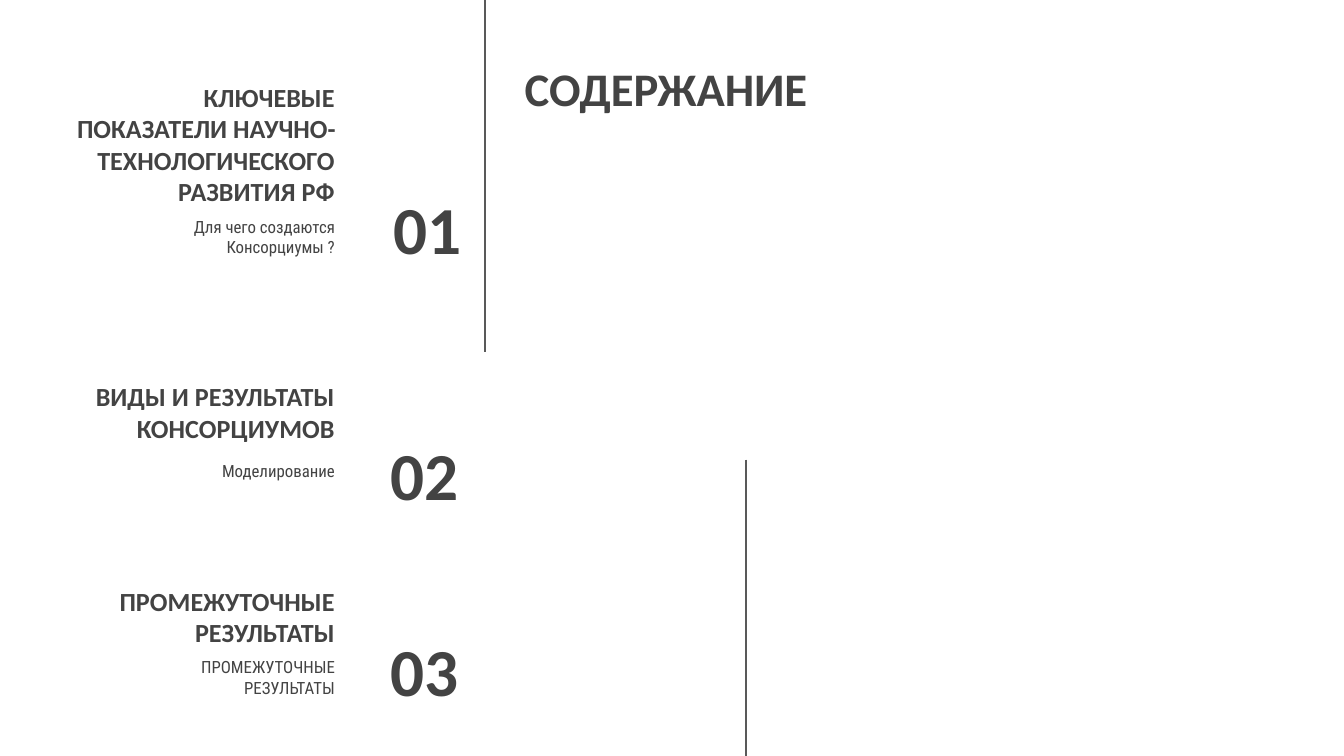
from lxml import etree
from pptx import Presentation
from pptx import util as u
from pptx.dml.color import RGBColor
from pptx.enum import shapes, text
from pptx.oxml.ns import qn

PX = 9144  # 100 px to the inch
INK, RULE = "434343", "595959"
HEAD_FONT, BODY_FONT = "Calibri", "Roboto Condensed"
RIGHT, CENTER = text.PP_ALIGN.RIGHT, text.PP_ALIGN.CENTER
TOP, MIDDLE, BOTTOM = (text.MSO_ANCHOR.TOP, text.MSO_ANCHOR.MIDDLE,
                       text.MSO_ANCHOR.BOTTOM)
ROW_H = 63

# top of the section, number offset (x, y), subtitle offset, wording
SECTIONS = [
    (101, (189, 37), 50, "01",
     "КЛЮЧЕВЫЕ ПОКАЗАТЕЛИ НАУЧНО-ТЕХНОЛОГИЧЕСКОГО РАЗВИТИЯ РФ",
     "Для чего создаются Консорциумы ?"),
    (277, (187, 44), 56, "02", "ВИДЫ И РЕЗУЛЬТАТЫ КОНСОРЦИУМОВ",
     "Моделирование"),
    (429, (187, 38), 50, "03", "ПРОМЕЖУТОЧНЫЕ РЕЗУЛЬТАТЫ",
     "ПРОМЕЖУТОЧНЫЕ РЕЗУЛЬТАТЫ"),
]


def px(n):
    return u.Emu(n * PX)


def color(value):
    return RGBColor.from_string(value)


def write(sp, box, words, size, align, anchor, font=HEAD_FONT, bold=True):
    """Place a text shape in box and format its single paragraph."""
    sp.left, sp.top, sp.width, sp.height = map(px, box)
    tf = sp.text_frame
    tf.word_wrap = True
    tf.auto_size = text.MSO_AUTO_SIZE.NONE
    tf.vertical_anchor = anchor
    tf.margin_left = tf.margin_right = tf.margin_top = tf.margin_bottom = px(10)
    tf.text = words
    p = tf.paragraphs[0]
    p.alignment = align
    p.line_spacing = 1.0
    f = p.runs[0].font
    f.name, f.size, f.bold = font, u.Pt(size), bold
    f.color.rgb = color(INK)


def add_text(s, box, *args, **kwargs):
    write(s.shapes.add_textbox(*map(px, box)), box, *args, **kwargs)


def add_section(s, x, y, number_at, subtitle_dy, number, heading, subtitle):
    dx, dy = number_at
    add_text(s, (x, y, 216, ROW_H), heading, 14, RIGHT, BOTTOM)
    add_text(s, (x + 33, y + subtitle_dy, 183, ROW_H), subtitle, 9, RIGHT, TOP,
             font=BODY_FONT, bold=False)
    add_text(s, (x + dx, y + dy, 121, ROW_H), number, 36, RIGHT, MIDDLE)


def add_vertical_rule(s, x, top, bottom):
    line = s.shapes.add_connector(shapes.MSO_CONNECTOR.STRAIGHT,
                                  px(x), px(top), px(x), px(bottom))
    line.line.color.rgb = color(RULE)
    line.line.width = u.Pt(0.75)
    etree.SubElement(line._element.spPr, qn("a:effectLst"))


def build_contents(prs):
    s = prs.slides.add_slide(prs.slide_layouts[5])
    s.background.fill.solid()
    s.background.fill.fore_color.rgb = color("FFFFFF")
    write(s.shapes.title, (366, 14, 259, 103), "СОДЕРЖАНИЕ", 25, CENTER, MIDDLE)
    for top, *parts in SECTIONS:
        add_section(s, 43, top, *parts)
    add_vertical_rule(s, 361, 0, 262)
    add_vertical_rule(s, 555, 342, 564)


def main():
    prs = Presentation()
    prs.slide_width = px(1000)
    prs.slide_height = u.Emu(prs.slide_width * 9 // 16)
    build_contents(prs)
    prs.save("out.pptx")


if __name__ == "__main__":
    main()
